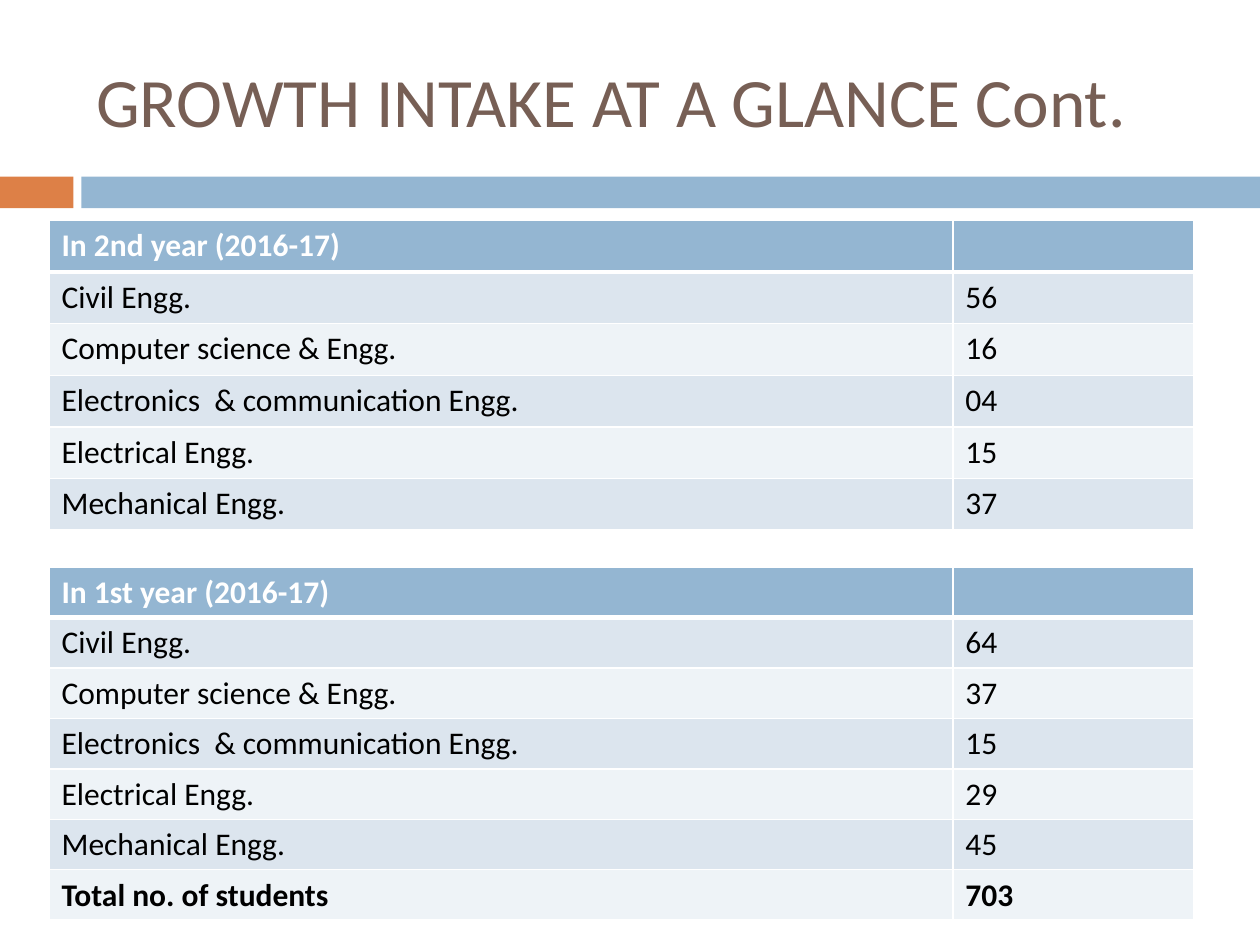
from dataclasses import dataclass

from lxml import etree
from pptx import Presentation
from pptx.dml.color import RGBColor
from pptx.enum.shapes import MSO_SHAPE
from pptx.enum.text import MSO_ANCHOR
from pptx.oxml.ns import qn
from pptx.util import Pt

RECT = MSO_SHAPE.RECTANGLE
MIDDLE = MSO_ANCHOR.MIDDLE
WHITE = RGBColor(0xFF, 0xFF, 0xFF)
BLACK = RGBColor(0, 0, 0)
BROWN = RGBColor(0x77, 0x5F, 0x55)
ORANGE = RGBColor(0xDD, 0x80, 0x47)
BLUE = RGBColor(0x94, 0xB6, 0xD2)
BANDS = RGBColor(0xEE, 0xF3, 0xF7), RGBColor(0xDC, 0xE5, 0xEE)
FONT = "Calibri"
LEFT = 28
COLS = 516.5, 137.5
BRANCHES = (
    "Civil Engg.",
    "Computer science & Engg.",
    "Electronics  & communication Engg.",
    "Electrical Engg.",
    "Mechanical Engg.",
)


@dataclass
class Bar:
    left: float
    width: float
    color: RGBColor


@dataclass
class Intake:
    title: str
    top: float
    height: float
    counts: tuple[str, ...]
    total: str = ""


BARS = Bar(0, 42, ORANGE), Bar(46.5, 673.5, BLUE)
INTAKES = (
    Intake("In 1st year (2016-17)", 324, 28.8, ("64", "37", "15", "29", "45"), "703"),
    Intake("In 2nd year (2016-17)", 126, 29.5, ("56", "16", "04", "15", "37")),
)


def style(frame, size: float, color: RGBColor, bold: bool = False) -> None:
    for run in frame.paragraphs[0].runs:
        font = run.font
        font.name, font.size, font.bold = FONT, Pt(size), bold
        font.color.rgb = color


def draw_bar(slide, bar: Bar) -> None:
    shape = slide.shapes.add_shape(RECT, Pt(bar.left), Pt(101), Pt(bar.width), Pt(18))
    shape.shadow.inherit = False
    shape.fill.solid()
    shape.fill.fore_color.rgb = bar.color
    shape.line.fill.background()


def draw_title(slide, text: str) -> None:
    box = slide.shapes.add_textbox(Pt(48), Pt(18), Pt(642), Pt(78))
    frame = box.text_frame
    frame.word_wrap = True
    frame.vertical_anchor = MIDDLE
    frame.text = text
    style(frame, 39.6, BROWN)


def add_edges(cell, top: float, bottom: float) -> None:
    props = cell._tc.get_or_add_tcPr()
    for side, width in (("L", 1), ("R", 1), ("T", top), ("B", bottom)):
        line = etree.SubElement(props, qn(f"a:ln{side}"), w=str(Pt(width)))
        fill = etree.SubElement(line, qn("a:solidFill"))
        etree.SubElement(fill, qn("a:srgbClr"), val=str(WHITE))


def draw_table(slide, intake: Intake) -> None:
    rows = [(intake.title, ""), *zip(BRANCHES, intake.counts)]
    if intake.total:
        rows.append(("Total no. of students", intake.total))
    table = slide.shapes.add_table(
        len(rows), len(COLS), Pt(LEFT), Pt(intake.top),
        Pt(sum(COLS)), Pt(intake.height * len(rows)),
    ).table
    for col, width in zip(table.columns, COLS):
        col.width = Pt(width)
    for r, row in enumerate(rows):
        head = r == 0
        bold = head or r > len(BRANCHES)
        for c, text in enumerate(row):
            cell = table.cell(r, c)
            add_edges(cell, 3 if r == 1 else 1, 3 if head else 1)
            cell.fill.solid()
            cell.fill.fore_color.rgb = BLUE if head else BANDS[r % 2]
            cell.text_frame.text = text
            style(cell.text_frame, 18, WHITE if head else BLACK, bold)


def main() -> None:
    deck = Presentation()
    deck.slide_width, deck.slide_height = Pt(720), Pt(540)
    slide = deck.slides.add_slide(deck.slide_layouts[6])
    for bar in BARS:
        draw_bar(slide, bar)
    draw_title(slide, "GROWTH INTAKE AT A GLANCE Cont.")
    for intake in INTAKES:
        draw_table(slide, intake)
    deck.save("out.pptx")


if __name__ == "__main__":
    main()
